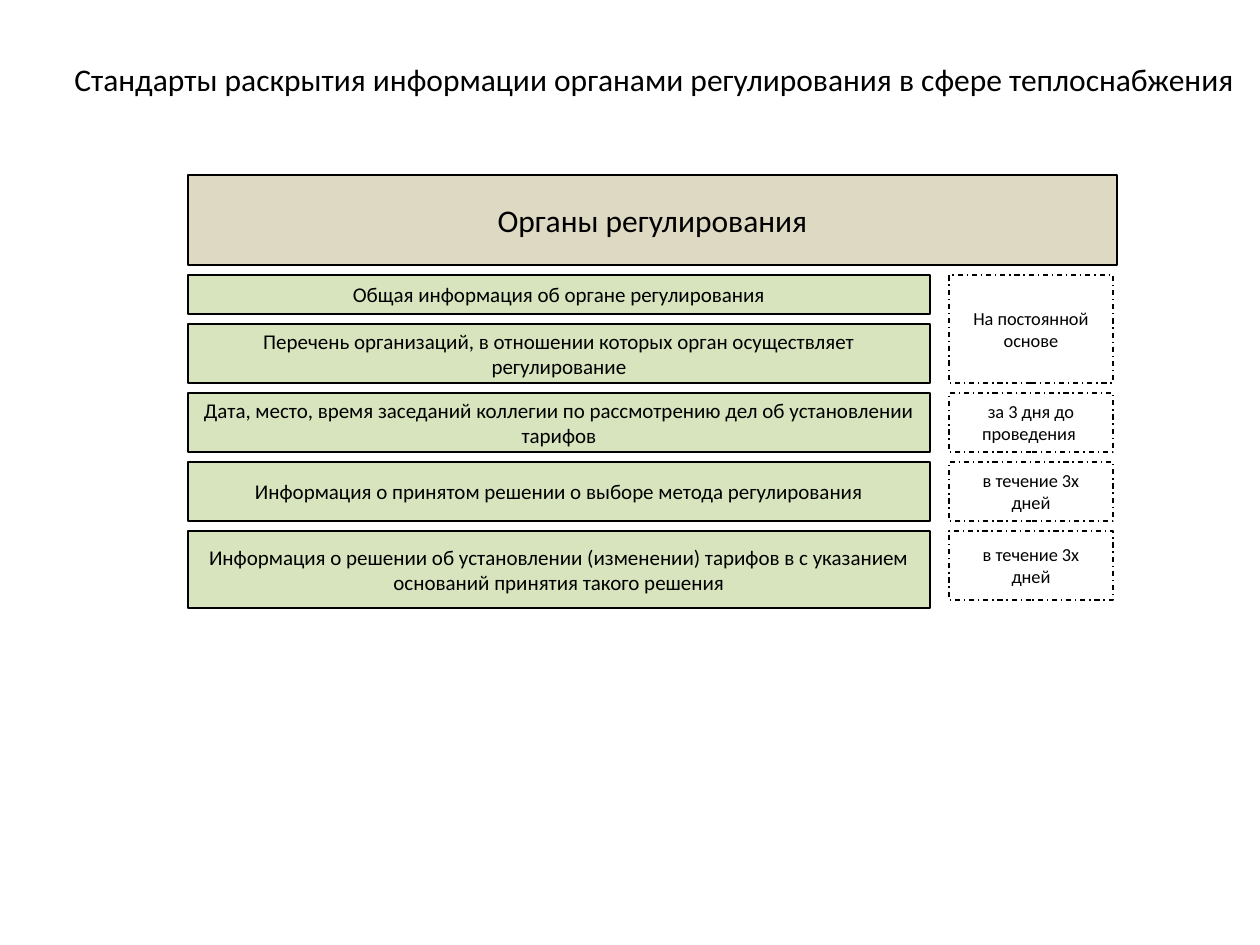
"""Build the slide on disclosure standards for heat supply regulators."""
from pptx import Presentation
from pptx.dml.color import RGBColor
from pptx.enum.dml import MSO_LINE
from pptx.enum.shapes import MSO_SHAPE
from pptx.enum.text import MSO_ANCHOR, MSO_AUTO_SIZE, PP_ALIGN
from pptx.util import Pt

TITLE = "Стандарты раскрытия информации органами регулирования в сфере теплоснабжения"
HEADER = "Органы регулирования"
DUTIES = [
    ("Общая информация об органе регулирования", 39),
    ("Перечень организаций, в отношении которых орган осуществляет регулирование", 59),
    ("Дата, место, время заседаний коллегии по рассмотрению дел об установлении тарифов", 59),
    ("Информация о принятом решении о выборе метода регулирования", 59),
    ("Информация о решении об установлении (изменении) тарифов в с указанием "
     "оснований принятия такого решения", 77),
]
TERMS = [
    ("На постоянной основе", 0, 1, 0),
    ("за 3 дня до проведения ", 2, 2, 0),
    ("в течение 3х дней", 3, 3, 0),
    ("в течение 3х дней", 4, 4, 8),
]
COLORS = {"text": "000000", "header": "DDD9C3", "duty": "D7E4BD", "term": "FFFFFF"}
FONT = "Calibri"
SCALE = 914400 / 126
GAP = 10
HEADER_BOX = (188, 175, 929, 90)
DUTY_LEFT, DUTY_WIDTH = 188, 742
TERM_LEFT, TERM_WIDTH = 949, 164


def emu(*lengths):
    return [round(length * SCALE) for length in lengths]


def color(name):
    return RGBColor.from_string(COLORS[name])


def write(frame, text, size, align, **settings):
    for name, value in settings.items():
        setattr(frame, name, value)
    para = frame.paragraphs[0]
    para.alignment = align
    span = para.add_run()
    span.text = text
    for name, value in {"name": FONT, "size": Pt(size)}.items():
        setattr(span.font, name, value)
    span.font.color.rgb = color("text")


def add_box(page, place, text, size, fill, dash=None):
    box = page.shapes.add_shape(MSO_SHAPE.RECTANGLE, *emu(*place))
    box.shadow.inherit = False
    box.fill.solid()
    box.fill.fore_color.rgb = color(fill)
    box.line.color.rgb = color("text")
    for name, value in {"width": Pt(0.75), "dash_style": dash}.items():
        setattr(box.line, name, value)
    write(box.text_frame, text, size, PP_ALIGN.CENTER,
          word_wrap=True, vertical_anchor=MSO_ANCHOR.MIDDLE)


def main():
    deck = Presentation()
    deck.slide_width, deck.slide_height = emu(1260, 945)
    page = deck.slides.add_slide(deck.slide_layouts[6])

    add_box(page, HEADER_BOX, HEADER, 18, "header")

    rows = []
    top = HEADER_BOX[1] + HEADER_BOX[3] + GAP
    for text, height in DUTIES:
        add_box(page, (DUTY_LEFT, top, DUTY_WIDTH, height), text, 12, "duty")
        rows.append((top, top + height))
        top += height + GAP

    for text, first, last, trim in TERMS:
        start, end = rows[first][0], rows[last][1] - trim
        add_box(page, (TERM_LEFT, start, TERM_WIDTH, end - start),
                text, 10.5, "term", MSO_LINE.DASH_DOT)

    title = page.shapes.add_textbox(*emu(62, 54, 1198, 50))
    write(title.text_frame, TITLE, 18, PP_ALIGN.LEFT,
          word_wrap=False, auto_size=MSO_AUTO_SIZE.SHAPE_TO_FIT_TEXT)
    deck.save("out.pptx")


if __name__ == "__main__":
    main()
